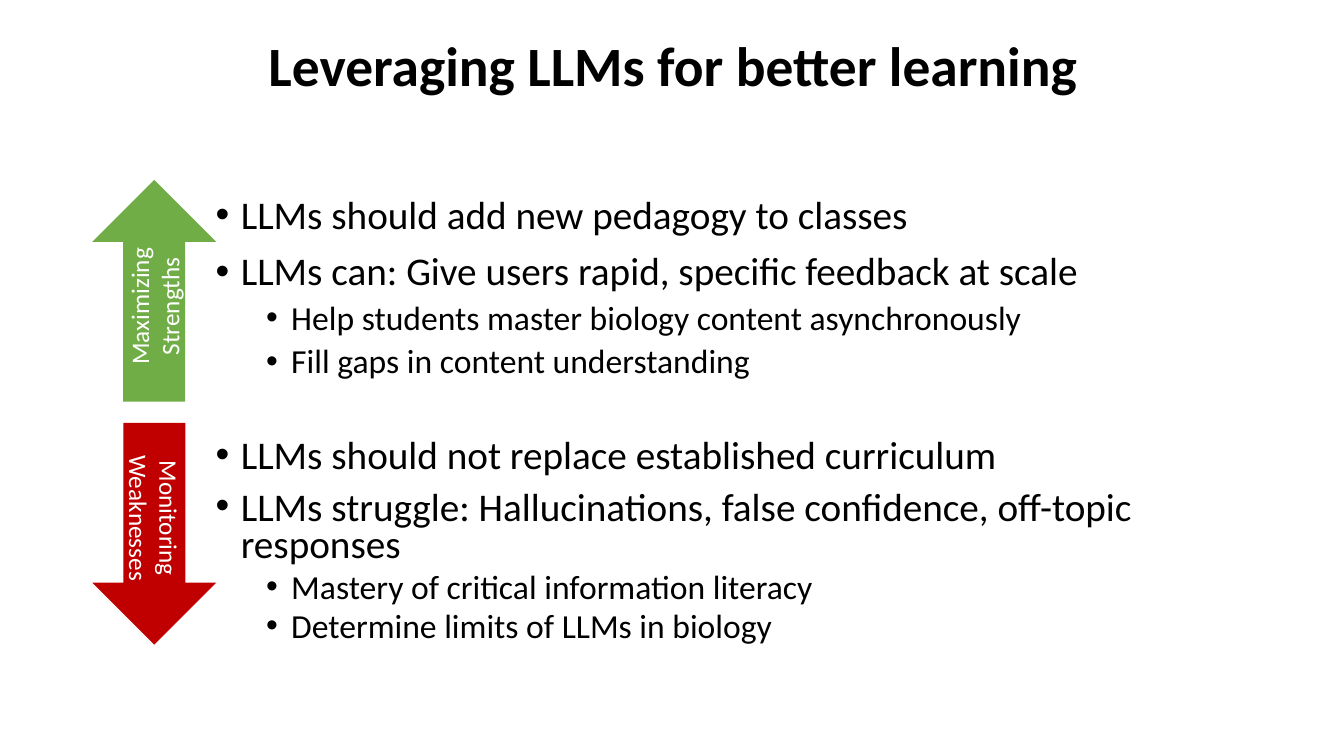
from pptx import Presentation
from pptx.dml.color import RGBColor
from pptx.enum.shapes import MSO_SHAPE as Shape
from pptx.enum.text import MSO_ANCHOR as Anchor, MSO_AUTO_SIZE as Fit, PP_ALIGN as Align
from pptx.oxml.ns import qn
from pptx.util import Inches, Pt
from lxml import etree

# Content
TITLE = "Leveraging LLMs for better learning"
FONT = "Calibri"
# label, turn, colour, arrow top, text top, text width, line spacing, points
PARTS = [
    ("Maximizing Strengths", 270, "70AD47", 2.27, 1.89, 10.69, 0.9, [
        (0, "LLMs should add new pedagogy to classes"),
        (0, "LLMs can: Give users rapid, specific feedback at scale"),
        (1, "Help students master biology content asynchronously"),
        (1, "Fill gaps in content understanding"),
    ]),
    ("Monitoring Weaknesses", 90, "C00000", 4.68, 4.31, 9.51, 0.8, [
        (0, "LLMs should not replace established curriculum"),
        (0, "LLMs struggle: Hallucinations, false confidence, off-topic responses"),
        (1, "Mastery of critical information literacy"),
        (1, "Determine limits of LLMs in biology"),
    ]),
]
# Per level: size, space before, left margin
LEVELS = [(28, 10, 0.25), (24, 5, 0.75)]


def color(code):
    return RGBColor.from_string(code)


def style(para, size, code, bold=False):
    font = para.font
    font.name, font.size, font.bold = FONT, Pt(size), bold
    font.color.rgb = color(code)


def bullet(para, margin):
    props = para._p.get_or_add_pPr()
    props.set("marL", str(Inches(margin)))
    props.set("indent", str(Inches(-0.25)))
    mark = etree.Element(qn("a:buFont"), typeface="Arial")
    char = etree.Element(qn("a:buChar"), char="•")
    # Bullets stand before the default run properties
    place = props.find(qn("a:defRPr"))
    place.addprevious(mark)
    place.addprevious(char)


def add_arrow(slide, label, turn, code, top):
    arrow = slide.shapes.add_shape(
        Shape.RIGHT_ARROW, Inches(0.43), Inches(top), Inches(2.2), Inches(1.23))
    arrow.rotation = turn
    arrow.shadow.inherit = False
    arrow.fill.solid()
    arrow.fill.fore_color.rgb = color(code)
    arrow.line.fill.background()
    frame = arrow.text_frame
    frame.word_wrap = True
    frame.vertical_anchor = Anchor.MIDDLE
    para = frame.paragraphs[0]
    para.text, para.alignment = label, Align.CENTER
    style(para, 18, "FFFFFF")


def add_points(slide, top, width, spacing, points):
    box = slide.shapes.add_textbox(
        Inches(2.04), Inches(top), Inches(width), Inches(2.2))
    frame = box.text_frame
    frame.word_wrap = True
    for i, (level, text) in enumerate(points):
        para = frame.add_paragraph() if i else frame.paragraphs[0]
        size, before, margin = LEVELS[level]
        para.text, para.level = text, level
        para.line_spacing = spacing
        para.space_before = Pt(before if i else 0)
        style(para, size, "000000")
        bullet(para, margin)


def main():
    deck = Presentation()
    deck.slide_width, deck.slide_height = Inches(13.33), Inches(7.5)
    slide = deck.slides.add_slide(deck.slide_layouts[5])

    # Title
    title = slide.shapes.title
    title.left, title.top = Inches(0.27), Inches(0.11)
    title.width, title.height = Inches(12.81), Inches(1.14)
    frame = title.text_frame
    frame.auto_size = Fit.NONE
    frame.vertical_anchor = Anchor.MIDDLE
    para = frame.paragraphs[0]
    para.text, para.alignment, para.line_spacing = TITLE, Align.CENTER, 0.9
    style(para, 39.6, "000000", True)

    # Arrows with their points
    for label, turn, code, arrow_top, top, width, spacing, points in PARTS:
        add_arrow(slide, label, turn, code, arrow_top)
        add_points(slide, top, width, spacing, points)

    deck.save("out.pptx")


if __name__ == "__main__":
    main()
